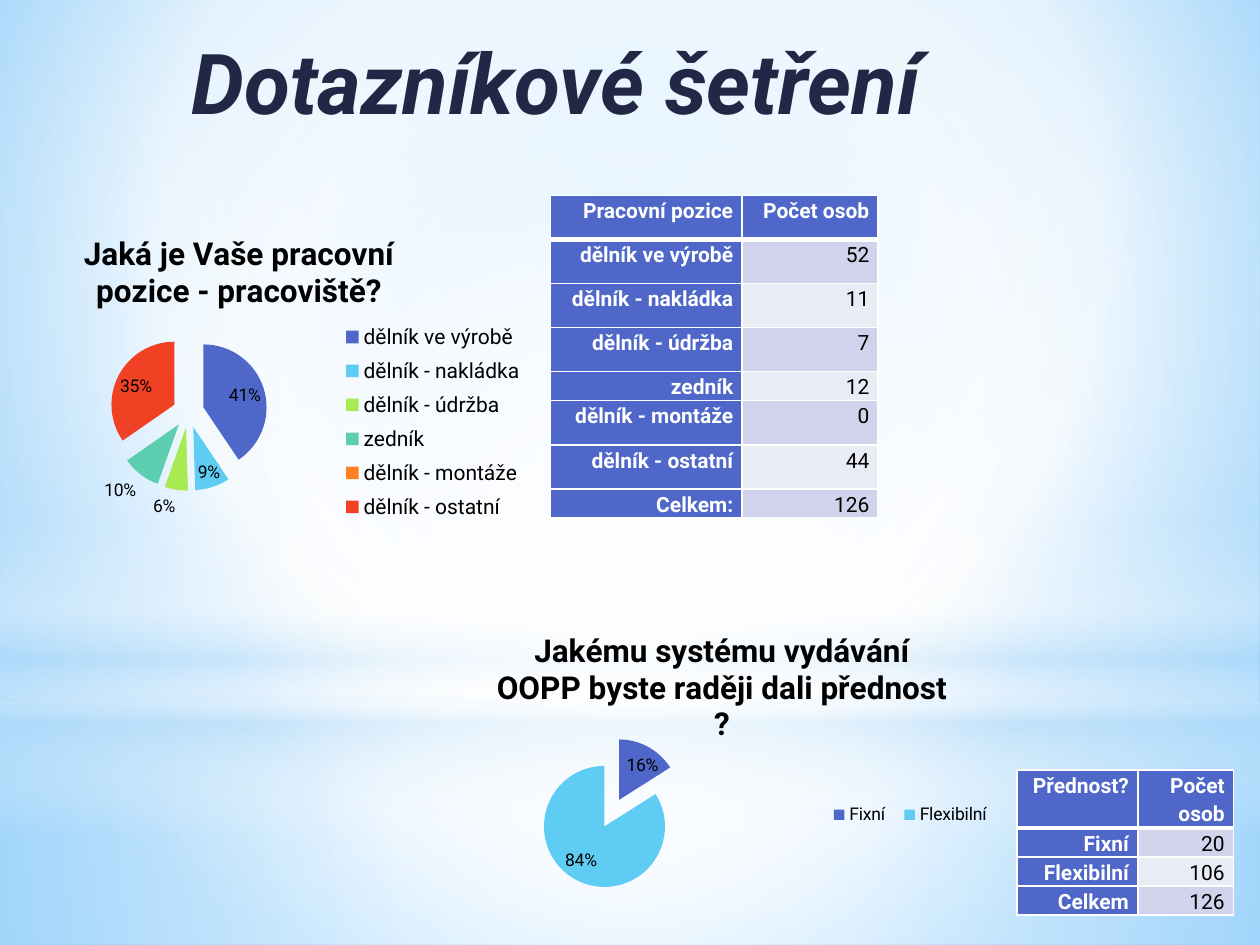
from dataclasses import dataclass, field

from pptx import Presentation
from pptx.chart.data import CategoryChartData
from pptx.dml.color import RGBColor
from pptx.enum import chart as ch, shapes, text
from pptx.oxml import parse_xml
from pptx.oxml.ns import nsdecls, qn
from pptx.util import Inches, Pt


@dataclass(frozen=True)
class Theme:
    font: str = "Roboto"
    navy: str = "212745"
    blue: str = "4E67C8"
    sky: str = "5ECCF3"
    lime: str = "A7EA52"
    teal: str = "5DCEAF"
    orange: str = "FF8021"
    red: str = "F14124"
    bands: tuple = ("D0D3EB", "E9EBF5")
    black: str = "000000"
    white: str = "FFFFFF"
    haze: str = "B4DCFA"
    title: int = 48
    head: int = 18
    body: int = 12
    small: int = 10


T = Theme()


@dataclass
class Glow:
    box: tuple
    stops: list
    kind: shapes.MSO_SHAPE = shapes.MSO_SHAPE.RECTANGLE
    centre: tuple | None = (50, 50, 50, 50)


@dataclass
class Pie:
    box: tuple
    title: str
    slices: list
    plot: tuple
    legend: tuple
    size: int
    spot: tuple | None = None


@dataclass
class Grid:
    box: tuple
    cols: tuple
    rows: list
    high: list = field(default_factory=list)


def style(font, size: int, color: str, bold: bool = False, italic: bool = False) -> None:
    font.name, font.size, font.bold, font.italic = T.font, Pt(size), bold, italic
    font.color.rgb = RGBColor.from_string(color)


def write(frame, words: str, align=text.PP_ALIGN.RIGHT, space: float = 1.0, **look) -> None:
    para = frame.paragraphs[0]
    para.alignment, para.line_spacing = align, space
    run = para.add_run()
    run.text = words
    style(run.font, **look)


def blend(fill, owner, stops: list, centre: tuple | None) -> None:
    """Fill with (place, colour, opacity) stops: circular, or vertical if no centre."""
    fill.gradient()
    marks = "".join(
        f'<a:gs pos="{pos * 1000}"><a:srgbClr val="{color}">'
        f'<a:alpha val="{alpha * 1000}"/></a:srgbClr></a:gs>'
        for pos, color, alpha in stops)
    if centre:
        sides = " ".join(f'{s}="{v * 1000}"' for s, v in zip("ltrb", centre))
        way = f'<a:path path="circle"><a:fillToRect {sides}/></a:path>'
    else:
        way = '<a:lin ang="5400000" scaled="0"/>'
    old = owner.find(qn("a:gradFill"))
    owner.replace(old, parse_xml(
        f'<a:gradFill {nsdecls("a")} rotWithShape="1"><a:gsLst>{marks}</a:gsLst>{way}</a:gradFill>'))


def add_glow(slide, glow: Glow) -> None:
    shape = slide.shapes.add_shape(glow.kind, *map(Inches, glow.box))
    shape.shadow.inherit = False
    shape.line.fill.background()
    blend(shape.fill, shape._element.spPr, glow.stops, glow.centre)


def layout(spot: tuple, inner: bool = False):
    """Manual chart layout from fractions x, y and, if given, w, h."""
    target = '<c:layoutTarget val="inner"/>' if inner else ""
    modes = '<c:xMode val="edge"/><c:yMode val="edge"/>'
    sizes = "".join(f'<c:{n} val="{v}"/>' for n, v in zip("xywh", spot))
    return parse_xml(f'<c:layout {nsdecls("c")}><c:manualLayout>{target}{modes}{sizes}'
                     '</c:manualLayout></c:layout>')


def place(node, after: str, spot: tuple, inner: bool = False) -> None:
    for old in node.findall(qn("c:layout")):
        node.remove(old)
    new = layout(spot, inner)
    if after:
        node.find(qn(after)).addnext(new)
    else:
        node.insert(0, new)


def add_pie(slide, pie: Pie) -> None:
    names, vals, colors = zip(*pie.slices)
    data = CategoryChartData()
    data.categories = names
    data.add_series(pie.title, vals)
    chart = slide.shapes.add_chart(ch.XL_CHART_TYPE.PIE, *map(Inches, pie.box), data).chart
    style(chart.font, T.small, T.black)
    chart.has_title = True
    write(chart.chart_title.text_frame, pie.title, text.PP_ALIGN.CENTER,
          size=T.head, color=T.black, bold=True)
    if pie.spot:
        place(chart.chart_title._element, "c:tx", pie.spot)

    chart.has_legend = True
    key = chart.legend
    key.position, key.include_in_layout = ch.XL_LEGEND_POSITION.RIGHT, False
    style(key.font, pie.size, T.black)
    place(key._element, "c:legendPos", pie.legend)

    plot = chart.plots[0]
    plot.vary_by_categories = True
    row = plot.series[0]
    for i, color in enumerate(colors):
        fill = row.points[i].format.fill
        fill.solid()
        fill.fore_color.rgb = RGBColor.from_string(color)
    row._element.find(qn("c:dPt")).addprevious(
        parse_xml(f'<c:explosion {nsdecls("c")} val="25"/>'))
    tags = row.data_labels
    tags.show_percentage, tags.show_value = True, False
    tags.number_format, tags.number_format_is_linked = "0%;;", False
    tags.position = ch.XL_LABEL_POSITION.BEST_FIT
    style(tags.font, T.small, T.black)
    place(chart._chartSpace.chart.plotArea, "", pie.plot, True)


def edge(cell, base: int) -> None:
    props = cell._tc.get_or_add_tcPr()
    for i, (side, wide) in enumerate(zip("LRTB", (1, 1, 1, base))):
        props.insert(i, parse_xml(
            f'<a:ln{side} {nsdecls("a")} w="{Pt(wide)}"><a:solidFill>'
            f'<a:srgbClr val="{T.white}"/></a:solidFill></a:ln{side}>'))


def add_grid(slide, grid: Grid) -> None:
    table = slide.shapes.add_table(
        len(grid.rows), len(grid.cols), *map(Inches, grid.box)).table
    for col, wide in zip(table.columns, grid.cols):
        col.width = Inches(wide)
    for r, (row, high) in enumerate(zip(grid.rows, grid.high)):
        table.rows[r].height = Inches(high)
        for c, words in enumerate(row):
            cell = table.cell(r, c)
            head = r == 0 or c == 0
            cell.margin_left = cell.margin_right = Inches(0.07)
            cell.margin_top = cell.margin_bottom = 0
            cell.fill.solid()
            cell.fill.fore_color.rgb = RGBColor.from_string(
                T.blue if head else T.bands[(r - 1) % 2])
            edge(cell, 1 if r else 3)
            write(cell.text_frame, words, space=1.15, size=T.body,
                  color=T.white if head else T.black, bold=head)


GLOWS = [
    Glow((0, 5.58, 10, 1.92), [(0, T.white, 91), (37, T.white, 76), (100, T.haze, 79)]),
    Glow((0, 0, 10, 5.58), [(0, T.white, 89), (48, T.white, 62), (100, T.haze, 79)]),
    Glow((0, 4.12, 10, 2.5), [(0, T.white, 0), (29, T.white, 30), (45, T.haze, 40),
                              (55, T.white, 26), (65, T.haze, 60), (100, T.white, 0)],
         centre=None),
    Glow((0, 1.75, 10, 5.58), [(0, T.white, 100), (56, T.white, 0)], shapes.MSO_SHAPE.OVAL),
]
JOBS = Pie((0.12, 1.62, 4.17, 2.6), "Jaká je Vaše pracovní pozice - pracoviště?",
           [("dělník ve výrobě", 41, T.blue), ("dělník - nakládka", 9, T.sky),
            ("dělník - údržba", 6, T.lime), ("zedník", 10, T.teal),
            ("dělník - montáže", 0, T.orange), ("dělník - ostatní", 35, T.red)],
           (0.18, 0.39, 0.3, 0.49), (0.61, 0.34, 0.37, 0.65), T.body, (0.12, 0.07))
MODES = Pie((3.43, 4.85, 4.6, 2.45),
            "Jakému systému vydávání OOPP byste raději dali přednost ?",
            [("Fixní", 16, T.blue), ("Flexibilní", 84, T.sky)],
            (0, 0.41, 0.62, 0.49), (0.67, 0.61, 0.31, 0.1), T.small)
STAFF = Grid((4.37, 1.55, 2.6, 2.56), (1.52, 1.08),
             [("Pracovní pozice", "Počet osob"), ("dělník ve výrobě", "52"),
              ("dělník - nakládka", "11"), ("dělník - údržba", "7"), ("zedník", "12"),
              ("dělník - montáže", "0"), ("dělník - ostatní", "44"), ("Celkem:", "126")],
             [0.35] * 4 + [0.23] + [0.35] * 2 + [0.23])
VOTES = Grid((8.07, 6.11, 1.72, 1.15), (0.96, 0.76),
             [("Přednost?", "Počet osob"), ("Fixní", "20"), ("Flexibilní", "106"),
              ("Celkem", "126")], [0.45] + [0.23] * 3)


def main() -> None:
    deck = Presentation()
    deck.slide_width, deck.slide_height = Inches(10), Inches(7.5)
    slide = deck.slides.add_slide(deck.slide_layouts[6])
    back = slide.background.fill
    blend(back, slide._element.find(".//" + qn("p:bgPr")),
          [(0, "9ED5FF", 100), (60, T.white, 100), (100, "5BB9FF", 100)], (20, 10, 20, 60))
    for glow in GLOWS:
        add_glow(slide, glow)
    frame = slide.shapes.add_textbox(*map(Inches, (0.28, 0.13, 7.12, 1.25))).text_frame
    frame.word_wrap, frame.margin_top = True, Inches(0.11)
    write(frame, "Dotazníkové šetření", size=T.title, color=T.navy, bold=True, italic=True)
    add_pie(slide, JOBS)
    add_grid(slide, STAFF)
    add_pie(slide, MODES)
    add_grid(slide, VOTES)
    deck.save("out.pptx")


if __name__ == "__main__":
    main()
